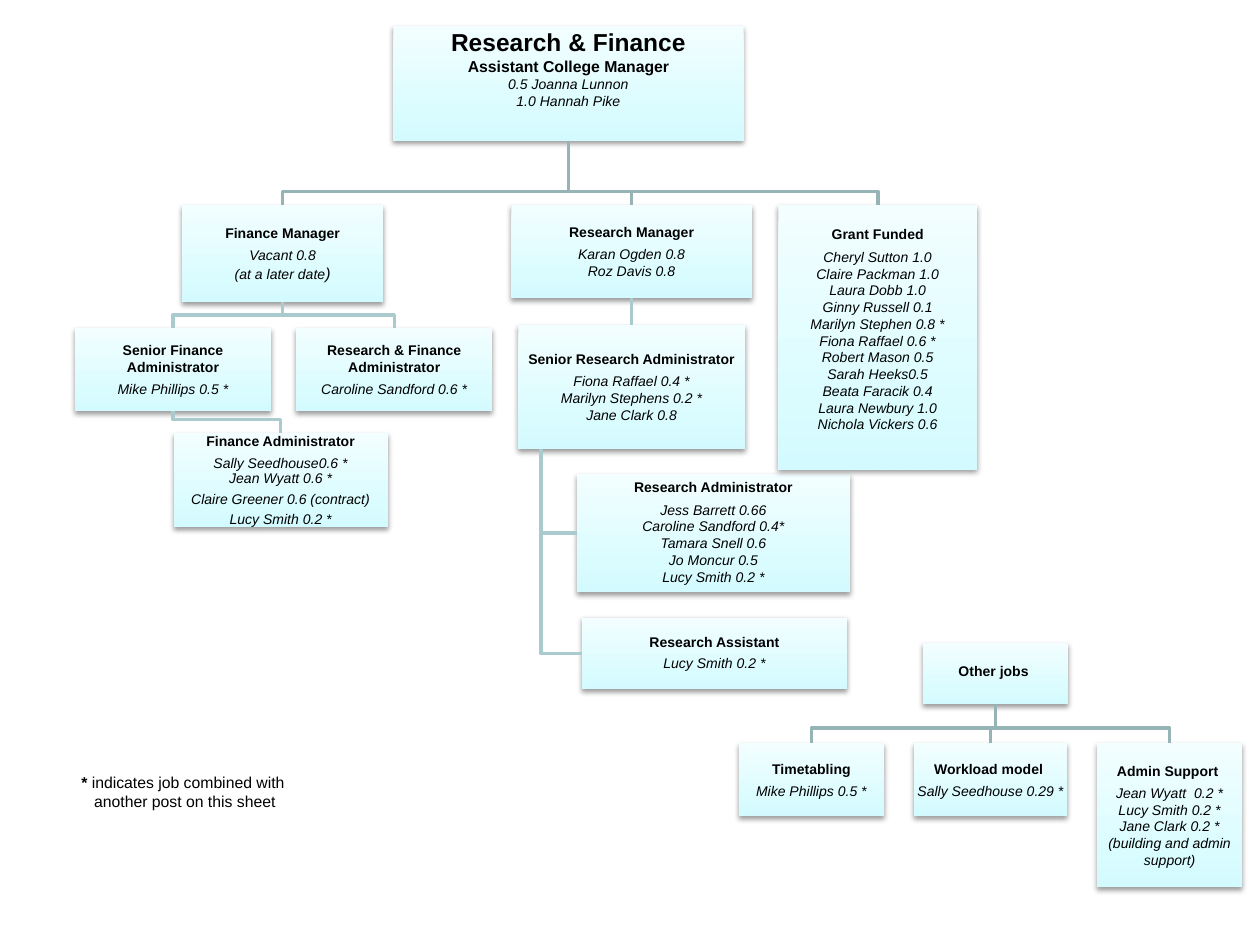
"""Builds the Research & Finance staff chart."""
from lxml.etree import SubElement
from pptx import Presentation
from pptx.dml.color import RGBColor
from pptx.enum.shapes import MSO_CONNECTOR, MSO_SHAPE
from pptx.enum.text import MSO_ANCHOR, MSO_AUTO_SIZE, PP_ALIGN
from pptx.oxml.ns import qn
from pptx.util import Cm, Pt

BLACK = RGBColor(0x00, 0x00, 0x00)
PALE = RGBColor(0xF2, 0xFE, 0xFF)
AQUA = RGBColor(0xD3, 0xFB, 0xFF)
DARK_LINE = RGBColor(0x96, 0xB3, 0xB6)
LIGHT_LINE = RGBColor(0xAA, 0xCB, 0xCE)

MANAGER_TOP = 4.14
FINANCE_TOP = 6.61
OTHER_TOP = 14.98


class StaffChart:
    font = "Arial"
    size = 8
    inset = Cm(0.03)
    line_width = Pt(2)

    def __init__(self, page):
        self.page = page

    def span(self, para, text, size=None, bold=False, italic=False):
        span = para.add_run()
        span.text = text
        span.font.name = self.font
        span.font.size = Pt(size or self.size)
        span.font.bold = bold
        span.font.italic = italic
        span.font.color.rgb = BLACK

    def panel(self, box):
        box.fill.gradient()
        box.fill.gradient_angle = 270
        for stop, color in zip(box.fill.gradient_stops, (PALE, AQUA)):
            stop.color.rgb = color
        box.line.fill.background()
        box.shadow.inherit = False
        effects = box._element.spPr.find(qn("a:effectLst"))
        shadow = SubElement(effects, qn("a:outerShdw"), blurRad="39370", dist="20320",
                            dir="5400000", rotWithShape="0")
        color = SubElement(shadow, qn("a:srgbClr"), val="000000")
        SubElement(color, qn("a:alpha"), val="38000")
        frame = box.text_frame
        frame.word_wrap = True
        frame.auto_size = MSO_AUTO_SIZE.NONE
        frame.vertical_anchor = MSO_ANCHOR.MIDDLE
        frame.margin_left = frame.margin_right = self.inset
        frame.margin_top = frame.margin_bottom = self.inset
        return frame

    def title(self, left, top, width, height, lines):
        box = self.page.shapes.title
        box.left, box.top, box.width, box.height = map(Cm, (left, top, width, height))
        frame = self.panel(box)
        frame.vertical_anchor = MSO_ANCHOR.TOP
        for number, (text, size, bold) in enumerate(lines):
            para = frame.add_paragraph() if number else frame.paragraphs[0]
            para.alignment = PP_ALIGN.CENTER
            self.span(para, text, size, bold, not bold)
        return box

    def post(self, left, top, width, height, heading, *names, tight=()):
        box = self.page.shapes.add_shape(MSO_SHAPE.RECTANGLE, Cm(left), Cm(top), Cm(width), Cm(height))
        frame = self.panel(box)
        para = frame.paragraphs[0]
        para.alignment = PP_ALIGN.CENTER
        self.span(para, heading, bold=True)
        if names:
            para.space_after = Pt(3)
        for name in names:
            para = frame.add_paragraph()
            para.alignment = PP_ALIGN.CENTER
            self.span(para, name, italic=True)
        for number in tight:
            frame.paragraphs[number].line_spacing = 0.9
            frame.paragraphs[number].space_after = Pt(3)
        return box

    def branch(self, points, color):
        builder = self.page.shapes.build_freeform(*points[0], scale=1.0)
        builder.add_line_segments(points[1:], close=False)
        branch = builder.convert_to_shape()
        branch.fill.background()
        branch.line.color.rgb = color
        branch.line.width = self.line_width
        branch.shadow.inherit = False

    def link(self, parent, child, color):
        link = self.page.shapes.add_connector(MSO_CONNECTOR.STRAIGHT, 0, 0, 0, 0)
        link.begin_connect(parent, 2)
        link.end_connect(child, 0)
        link.line.color.rgb = color
        link.line.width = self.line_width
        SubElement(link._element.spPr, qn("a:effectLst"))

    def tree(self, parent, bus, children, color):
        bus = Cm(bus)
        start = parent.left + parent.width // 2
        for child in children:
            end = child.left + child.width // 2
            self.branch([(start, parent.top + parent.height), (start, bus),
                         (end, bus), (end, child.top)], color)

    def side_tree(self, parent, stem, children, color):
        stem = Cm(stem)
        for child in children:
            level = child.top + child.height // 2
            self.branch([(stem, parent.top + parent.height), (stem, level), (child.left, level)], color)

    def footnote(self, left, top, width, height, mark, text):
        box = self.page.shapes.add_textbox(Cm(left), Cm(top), Cm(width), Cm(height))
        box.text_frame.word_wrap = True
        para = box.text_frame.paragraphs[0]
        properties = para._p.get_or_add_pPr()
        properties.set("marL", str(Cm(0.26)))
        properties.set("indent", str(-Cm(0.26)))
        self.span(para, mark, 9, bold=True)
        self.span(para, text, 9)


def main():
    deck = Presentation()
    deck.slide_width, deck.slide_height = Cm(25.4), Cm(19.05)
    chart = StaffChart(deck.slides.add_slide(deck.slide_layouts[5]))

    head = chart.title(7.93, 0.52, 7.06, 2.32, [
        ("Research & Finance", 14, True), ("Assistant College Manager", 9, True),
        ("0.5 Joanna Lunnon", 8, False), ("1.0 Hannah Pike", 8, False)])

    finance = chart.post(3.67, MANAGER_TOP, 4.06, 1.95, "Finance Manager",
                         "Vacant 0.8", "(at a later date")
    chart.span(finance.text_frame.paragraphs[-1], ")", 9, italic=True)
    senior_finance = chart.post(1.51, FINANCE_TOP, 3.96, 1.68, "Senior Finance Administrator",
                                "Mike Phillips 0.5 *")
    finance_research = chart.post(5.97, FINANCE_TOP, 3.96, 1.68, "Research & Finance Administrator",
                                  "Caroline Sandford 0.6 *")
    finance_admin = chart.post(3.5, 8.73, 4.32, 1.9, "Finance Administrator",
                               "Sally Seedhouse0.6 *", "Jean Wyatt 0.6 *",
                               "Claire Greener 0.6 (contract)", "Lucy Smith 0.2 *", tight=(2, 3, 4))

    research = chart.post(10.31, MANAGER_TOP, 4.85, 1.87, "Research Manager",
                          "Karan Ogden 0.8", "Roz Davis 0.8")
    senior_research = chart.post(10.45, 6.55, 4.57, 2.51, "Senior Research Administrator",
                                 "Fiona Raffael 0.4 *", "Marilyn Stephens 0.2 *", "Jane Clark 0.8")
    research_admin = chart.post(11.63, 9.55, 5.51, 2.39, "Research Administrator",
                                "Jess Barrett 0.66", "Caroline Sandford 0.4*", "Tamara Snell 0.6",
                                "Jo Moncur 0.5", "Lucy Smith 0.2 *", tight=(0,))
    assistant = chart.post(11.73, 12.45, 5.35, 1.45, "Research Assistant", "Lucy Smith 0.2 *",
                           tight=(0, 1))

    grants = chart.post(15.69, MANAGER_TOP, 4.01, 5.33, "Grant Funded",
                        "Cheryl Sutton 1.0", "Claire Packman 1.0", "Laura Dobb 1.0",
                        "Ginny Russell 0.1", "Marilyn Stephen 0.8 *", "Fiona Raffael 0.6 *",
                        "Robert Mason 0.5", "Sarah Heeks0.5", "Beata Faracik 0.4",
                        "Laura Newbury 1.0", "Nichola Vickers 0.6", tight=(0,))
    grants.text_frame.margin_bottom = Cm(0.32)

    other = chart.post(18.61, 12.96, 2.92, 1.24, "Other jobs ")
    other.text_frame.margin_bottom = Cm(0.12)
    timetabling = chart.post(14.9, OTHER_TOP, 2.92, 1.48, "Timetabling", "Mike Phillips 0.5 *")
    workload = chart.post(18.42, OTHER_TOP, 3.1, 1.48, "Workload model ", "Sally Seedhouse 0.29 *")
    support = chart.post(22.12, OTHER_TOP, 2.92, 2.91, "Admin Support ",
                         "Jean Wyatt  0.2 *", "Lucy Smith 0.2 *",
                         "Jane Clark 0.2 * (building and admin support)")

    chart.tree(head, 3.86, [finance, research, grants], DARK_LINE)
    chart.tree(finance, 6.35, [senior_finance, finance_research], LIGHT_LINE)
    chart.tree(senior_finance, 8.46, [finance_admin], LIGHT_LINE)
    chart.link(research, senior_research, LIGHT_LINE)
    chart.side_tree(senior_research, 10.91, [research_admin, assistant], LIGHT_LINE)
    chart.tree(other, 14.68, [timetabling, workload, support], DARK_LINE)

    chart.footnote(1.39, 15.45, 5.1, 1.68, "* ",
                   "indicates job combined with another post on this sheet")
    deck.save("out.pptx")


if __name__ == "__main__":
    main()
